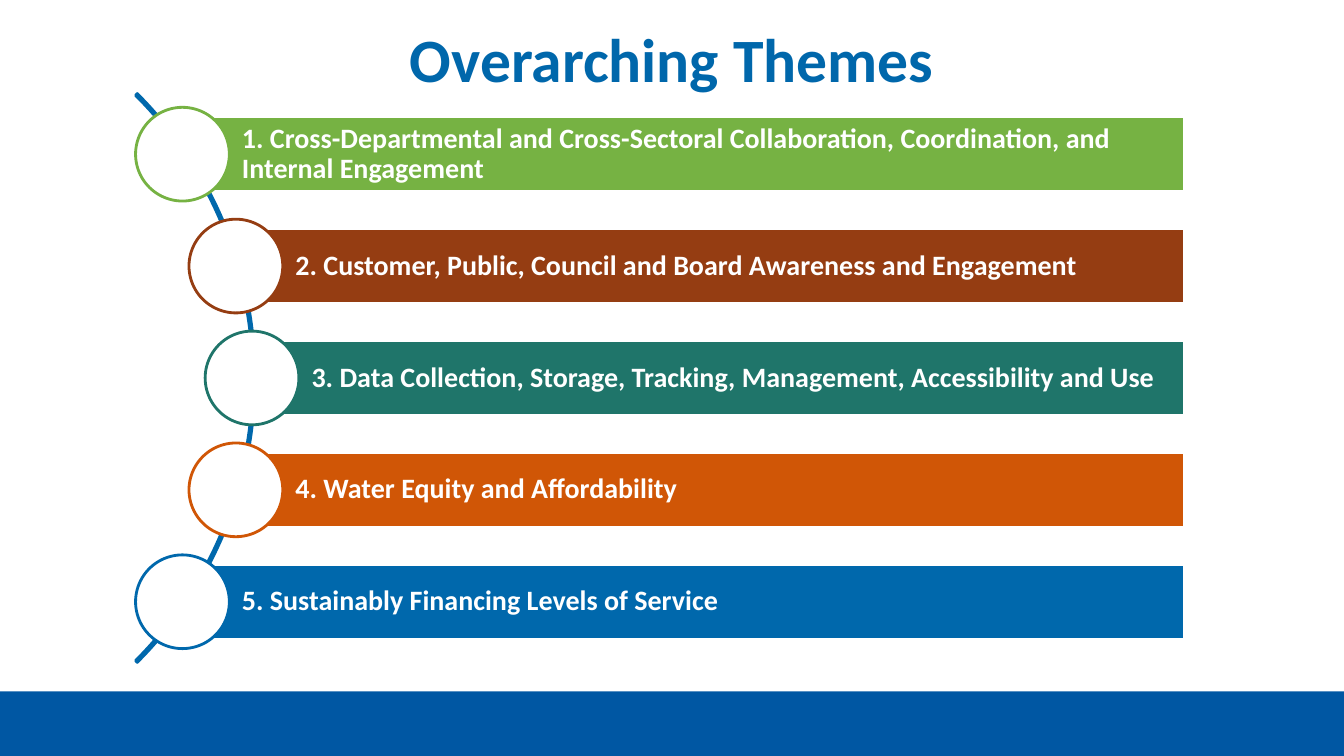
from pptx import Presentation
from pptx.dml.color import RGBColor
from pptx.enum import shapes, text
from pptx.util import Inches, Pt

KIND = shapes.MSO_SHAPE
ALIGN = text.PP_ALIGN
THEMES = [
    (1.81, "76B243", "1. Cross-Departmental and Cross-Sectoral Collaboration, "
                     "Coordination, and Internal Engagement"),
    (2.34, "953D12", "2. Customer, Public, Council and Board Awareness and Engagement"),
    (2.5, "1F756A", "3. Data Collection, Storage, Tracking, Management, "
                    "Accessibility and Use"),
    (2.34, "D05606", "4. Water Equity and Affordability"),
    (1.81, "0068AC", "5. Sustainably Financing Levels of Service"),
]
RIGHT, TOP, STEP = 11.75, 1.16, 1.11
HIGH, DISC = 0.74, 0.93


def paint(fmt, color):
    fmt.solid()
    fmt.fore_color.rgb = RGBColor.from_string(color)


def write(shape, words, size=20, color="FFFFFF", align=ALIGN.LEFT,
          space=0.9, left=0.1, pad=0.05):
    frame = shape.text_frame
    frame.word_wrap = True
    frame.auto_size = text.MSO_AUTO_SIZE.NONE
    frame.vertical_anchor = text.MSO_ANCHOR.MIDDLE
    frame.margin_left = Inches(left)
    frame.margin_right = frame.margin_top = frame.margin_bottom = Inches(pad)
    para = frame.paragraphs[0]
    para.alignment = align
    para.line_spacing = space
    run = para.add_run()
    run.text = words
    run.font.name = "Calibri"
    run.font.size = Pt(size)
    run.font.bold = True
    paint(run.font.fill, color)


def draw(slide, kind, box, fill, line=None):
    shape = slide.shapes.add_shape(kind, *map(Inches, box))
    shape.shadow.inherit = False
    paint(shape.fill, fill)
    if line:
        paint(shape.line.fill, line)
        shape.line.width = Pt(2)
    else:
        shape.line.fill.background()
    return shape


def head(slide, words):
    title = slide.shapes.title
    title.left, title.top = Inches(0), Inches(0)
    title.width, title.height = Inches(13.33), Inches(1.25)
    write(title, words, size=44, color="0067AB", align=ALIGN.CENTER, pad=0.1)


def curve(slide):
    arc = draw(slide, KIND.BLOCK_ARC, (-5.45, -0.24, 7.98, 7.98), "0068AC", "0068AC")
    for i, value in enumerate((189, 27, 0.003)):
        arc.adjustments[i] = value


def theme(slide, row, left, color, words):
    top = TOP + row * STEP
    bar = draw(slide, KIND.RECTANGLE, (left, top, RIGHT - left, HIGH), color, "FFFFFF")
    write(bar, words, left=0.59, pad=0.06)
    box = (left - DISC / 2, top + (HIGH - DISC) / 2, DISC, DISC)
    draw(slide, KIND.OVAL, box, "FFFFFF", color)


def main():
    deck = Presentation()
    deck.slide_width, deck.slide_height = Inches(13.33), Inches(7.5)
    slide = deck.slides.add_slide(deck.slide_layouts[5])
    paint(slide.background.fill, "FFFFFF")
    draw(slide, KIND.RECTANGLE, (0, 6.86, 13.33, 0.64), "0057A3")
    head(slide, "Overarching Themes")
    curve(slide)
    for row, item in enumerate(THEMES):
        theme(slide, row, *item)
    deck.save("out.pptx")


if __name__ == "__main__":
    main()
